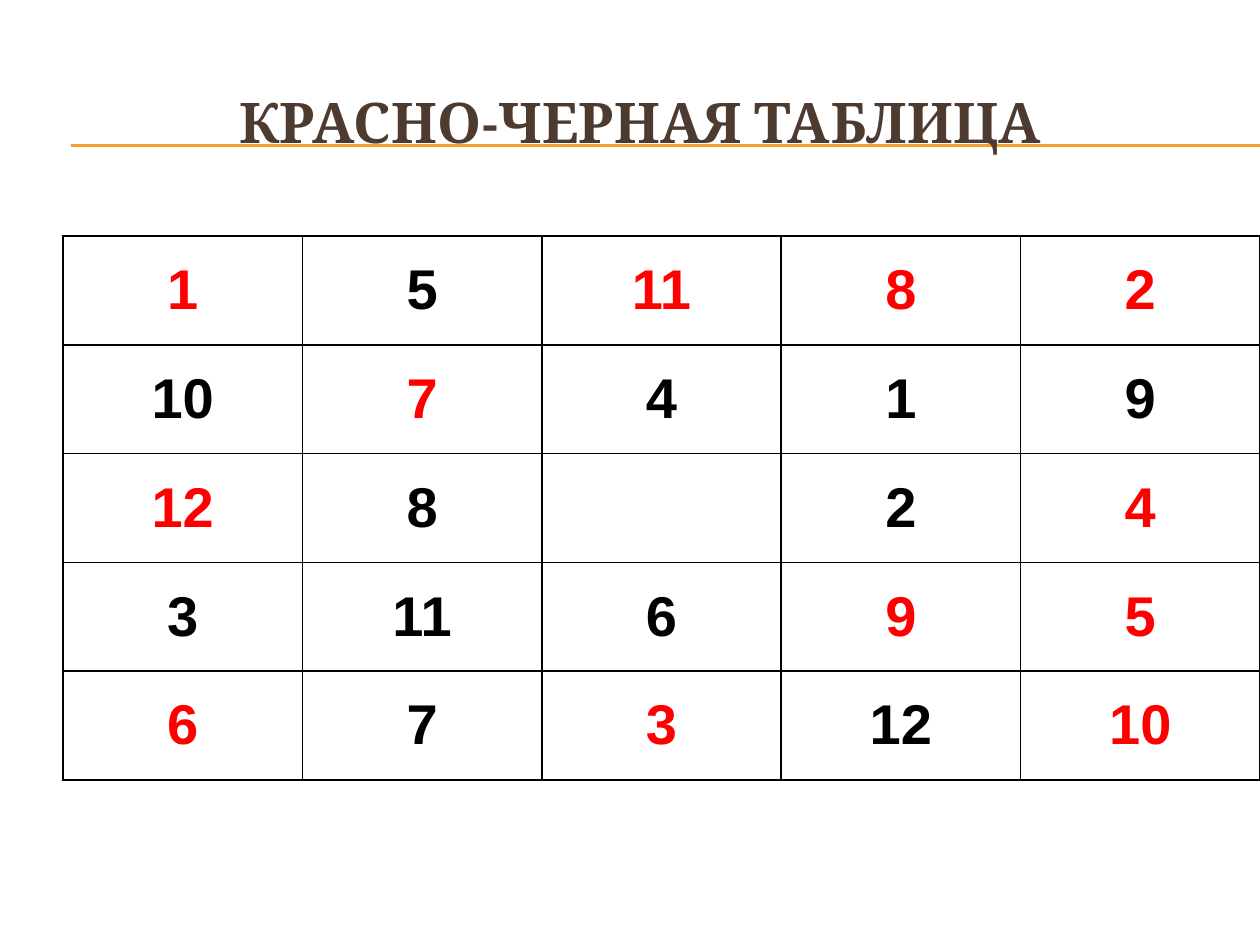
import pptx
import pptx.dml.color
import pptx.enum.shapes
import pptx.enum.text
import pptx.oxml
import pptx.oxml.ns
import pptx.util
from dataclasses import dataclass


@dataclass(frozen=True)
class Theme:
    title_font: str = "Cambria"
    table_font: str = "Arial"
    size: int = 32
    brown: str = "4E3B30"
    gold: str = "F0A22E"
    red: str = "FF0000"
    black: str = "000000"
    white: str = "FFFFFF"


theme = Theme()
rgb = pptx.dml.color.RGBColor.from_string


def px(n):
    """Length in EMU, at 126 px to the inch."""
    return round(n * 914400 / 126)


def style(p, name, color):
    p.alignment = pptx.enum.text.PP_ALIGN.CENTER
    p.font.name = name
    p.font.size = pptx.util.Pt(theme.size)
    p.font.bold = True
    p.font.color.rgb = rgb(color)


prs = pptx.Presentation()
prs.slide_width, prs.slide_height = px(1260), px(945)
s = prs.slides.add_slide(prs.slide_layouts[5])

# Title
title = s.shapes.title
title.left, title.top, title.width, title.height = px(42), px(63), px(1197), px(116)
tf = title.text_frame
tf.text = "КРАСНО-ЧЕРНАЯ ТАБЛИЦА"
tf.vertical_anchor = pptx.enum.text.MSO_ANCHOR.MIDDLE
tf.auto_size = pptx.enum.text.MSO_AUTO_SIZE.NONE
style(tf.paragraphs[0], theme.title_font, theme.brown)

# Double gold rule, running behind the title
for y in (145, 146):
    rule = s.shapes.add_connector(
        pptx.enum.shapes.MSO_CONNECTOR.STRAIGHT, px(71), px(y), px(1260), px(y))
    rule.line.color.rgb = rgb(theme.gold)
    rule.line.width = pptx.util.Pt(0.75)
    rule._element.spPr.append(pptx.oxml.parse_xml(
        f'<a:effectLst {pptx.oxml.ns.nsdecls("a")}/>'))
    title._element.addprevious(rule._element)

# Number grid: (value, is red)
R, B = True, False
grid = [
    [(1, R), (5, B), (11, R), (8, R), (2, R)],
    [(10, B), (7, R), (4, B), (1, B), (9, B)],
    [(12, R), (8, B), ("", B), (2, B), (4, R)],
    [(3, B), (11, B), (6, B), (9, R), (5, R)],
    [(6, R), (7, B), (3, R), (12, B), (10, R)],
]
frame = s.shapes.add_table(
    len(grid), len(grid[0]), px(63), px(236), px(1197), px(544))
table = frame.table
table.first_row = table.horz_banding = False

for i, row in enumerate(grid):
    for j, (value, is_red) in enumerate(row):
        cell = table.cell(i, j)
        cell.vertical_anchor = pptx.enum.text.MSO_ANCHOR.MIDDLE
        cell.text = str(value)
        style(cell.text_frame.paragraphs[0], theme.table_font,
              theme.red if is_red else theme.black)
        cell.fill.solid()
        cell.fill.fore_color.rgb = rgb(theme.white)
        tcPr = cell._tc.get_or_add_tcPr()
        for k, side in enumerate(("lnL", "lnR", "lnT", "lnB")):
            tcPr.insert(k, pptx.oxml.parse_xml(
                f'<a:{side} {pptx.oxml.ns.nsdecls("a")} w="{pptx.util.Pt(1)}">'
                f'<a:solidFill><a:srgbClr val="{theme.black}"/></a:solidFill>'
                f'</a:{side}>'))

prs.save("out.pptx")
